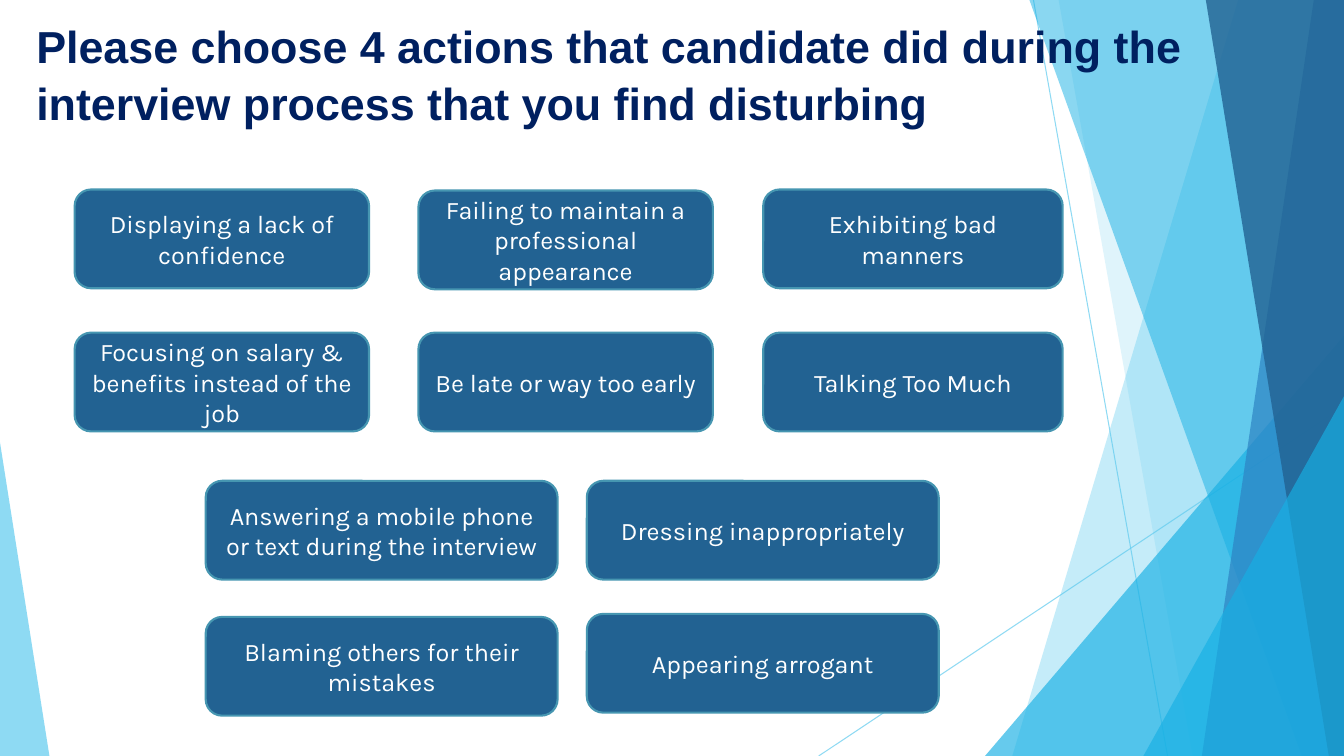
from dataclasses import dataclass
from typing import NamedTuple

from lxml.etree import SubElement
from pptx import Presentation
from pptx.dml.color import RGBColor
from pptx.dml.fill import FillFormat
from pptx.enum.shapes import MSO_CONNECTOR, MSO_SHAPE
from pptx.enum.text import MSO_ANCHOR, MSO_AUTO_SIZE, PP_ALIGN
from pptx.oxml.ns import qn
from pptx.shapes.autoshape import Shape
from pptx.slide import Slide
from pptx.util import Emu, Pt

EMU_PER_PX = 9144
PAGE_WIDTH, PAGE_HEIGHT = 1333, 750


@dataclass(frozen=True)
class Theme:
    sky: str = "5FCBEF"
    cyan: str = "17B0E4"
    blue: str = "2E83C3"
    navy: str = "226292"
    card_edge: str = "4696B1"
    title_ink: str = "002060"
    card_ink: str = "FFFFFF"
    title_font: str = "Arial"
    card_font: str = "Karla"
    title_size: int = 32
    card_size: int = 18
    card_line: float = 1.5
    ray_line: float = 0.75


THEME = Theme()


class Ray(NamedTuple):
    start: tuple[int, int]
    end: tuple[int, int]


class Panel(NamedTuple):
    top_left: int
    bottom_left: int
    color: str
    opacity: int


class Wedge(NamedTuple):
    left: int
    top: int
    width: int
    apex: float
    color: str
    opacity: int


class CardColumn(NamedTuple):
    left: int
    width: int
    cards: list[tuple[int, str]]


CARD_HEIGHT = 98
RAYS = [Ray((1025, 0), (1158, 750)), Ray((1333, 403), (812, 750))]
BACKDROP = [
    Panel(1228, 1004, THEME.sky, 36),
    Panel(1050, 1183, THEME.sky, 20),
    Wedge(977, 333, 356, 1, THEME.cyan, 66),
    Panel(1021, 1291, THEME.cyan, 50),
    Panel(1303, 1192, THEME.blue, 70),
    Panel(1196, 1318, THEME.navy, 80),
    Wedge(1134, 393, 199, 1, THEME.cyan, 66),
    Wedge(0, 439, 49, 0, THEME.sky, 70),
]
TITLE = "Please choose 4 actions that candidate did during the interview process that you find disturbing"
CARD_COLUMNS = [
    CardColumn(74, 292, [
        (188, "Displaying a lack of confidence"),
        (330, "Focusing on salary & benefits instead of the job"),
    ]),
    CardColumn(415, 292, [
        (189, "Failing to maintain a professional appearance"),
        (330, "Be late or way too early"),
    ]),
    CardColumn(757, 297, [
        (188, "Exhibiting bad manners"),
        (330, "Talking Too Much"),
    ]),
    CardColumn(204, 349, [
        (477, "Answering a mobile phone or text during the interview"),
        (612, "Blaming others for their mistakes"),
    ]),
    CardColumn(582, 349, [
        (477, "Dressing inappropriately"),
        (609, "Appearing arrogant"),
    ]),
]


def px(length: int) -> Emu:
    return Emu(length * EMU_PER_PX)


def paint(fill: FillFormat, color: str, opacity: int = 100) -> None:
    fill.solid()
    fill.fore_color.rgb = RGBColor.from_string(color)
    if opacity < 100:
        tint = fill._xPr.find(f"{qn('a:solidFill')}/{qn('a:srgbClr')}")
        SubElement(tint, qn("a:alpha")).set("val", str(opacity * 1000))


def write(shape: Shape, text: str, font: str, size: int, color: str,
          align: PP_ALIGN, anchor: MSO_ANCHOR, bold: bool = False) -> None:
    frame = shape.text_frame
    frame.word_wrap = True
    frame.auto_size = MSO_AUTO_SIZE.NONE
    frame.vertical_anchor = anchor
    para = frame.paragraphs[0]
    para.alignment = align
    span = para.add_run()
    span.text = text
    span.font.name = font
    span.font.size = Pt(size)
    span.font.bold = bold
    span.font.color.rgb = RGBColor.from_string(color)


def draw_ray(page: Slide, ray: Ray) -> None:
    line = page.shapes.add_connector(
        MSO_CONNECTOR.STRAIGHT, *map(px, ray.start + ray.end))
    line.line.width = Pt(THEME.ray_line)
    paint(line.line.fill, THEME.sky, 70)
    SubElement(line._element.spPr, qn("a:effectLst"))


def draw_backdrop(page: Slide, part: Panel | Wedge) -> None:
    if isinstance(part, Panel):
        outline = page.shapes.build_freeform(part.top_left, 0, EMU_PER_PX)
        outline.add_line_segments([
            (PAGE_WIDTH, 0), (PAGE_WIDTH, PAGE_HEIGHT), (part.bottom_left, PAGE_HEIGHT)])
        shape = outline.convert_to_shape()
    else:
        shape = page.shapes.add_shape(
            MSO_SHAPE.ISOSCELES_TRIANGLE, px(part.left), px(part.top),
            px(part.width), px(PAGE_HEIGHT - part.top))
        shape.adjustments[0] = part.apex
    shape.shadow.inherit = False
    shape.line.fill.background()
    paint(shape.fill, part.color, part.opacity)


def place_title(page: Slide) -> None:
    title = page.shapes.title
    title.left, title.top, title.width, title.height = map(px, (26, 11, 1160, 107))
    write(title, TITLE, THEME.title_font, THEME.title_size, THEME.title_ink,
          PP_ALIGN.LEFT, MSO_ANCHOR.TOP, bold=True)
    title.text_frame.paragraphs[0].line_spacing = 1.05
    title.element.getparent().append(title.element)


def draw_card(page: Slide, left: int, top: int, width: int, text: str) -> None:
    box = page.shapes.add_shape(
        MSO_SHAPE.ROUNDED_RECTANGLE, px(left), px(top), px(width), px(CARD_HEIGHT))
    box.shadow.inherit = False
    paint(box.fill, THEME.navy)
    paint(box.line.fill, THEME.card_edge)
    box.line.width = Pt(THEME.card_line)
    write(box, text, THEME.card_font, THEME.card_size, THEME.card_ink,
          PP_ALIGN.CENTER, MSO_ANCHOR.MIDDLE)


def main() -> None:
    deck = Presentation()
    deck.slide_width, deck.slide_height = px(PAGE_WIDTH), px(PAGE_HEIGHT)
    page = deck.slides.add_slide(deck.slide_layouts.get_by_name("Title Only"))
    for ray in RAYS:
        draw_ray(page, ray)
    for part in BACKDROP:
        draw_backdrop(page, part)
    place_title(page)
    for column in CARD_COLUMNS:
        for top, text in column.cards:
            draw_card(page, column.left, top, column.width, text)
    deck.save("out.pptx")


if __name__ == "__main__":
    main()
